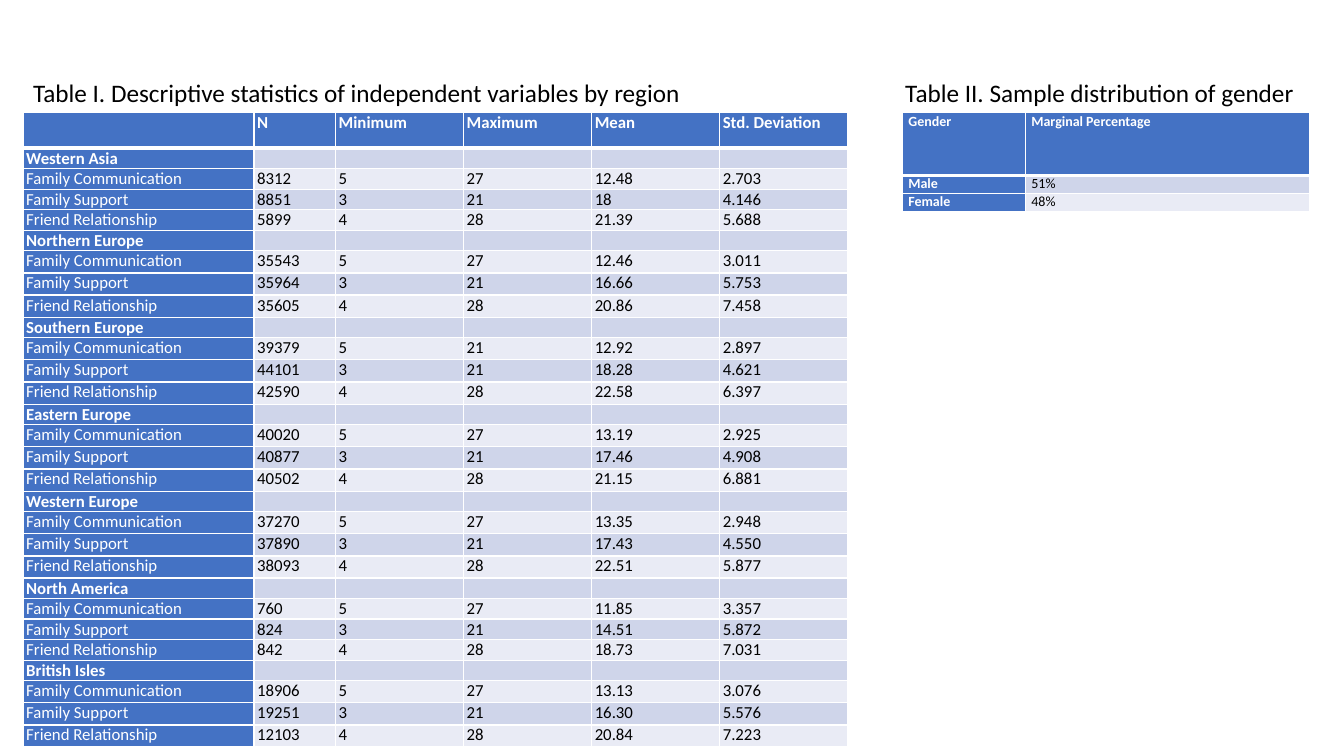
from lxml import etree
from pptx import Presentation
from pptx.dml.color import RGBColor
from pptx.enum.text import MSO_AUTO_SIZE
from pptx.oxml.ns import qn
from pptx.util import Inches, Pt

FIT_SHAPE = MSO_AUTO_SIZE.SHAPE_TO_FIT_TEXT

# Content
FONT = "Calibri"
BLUE, DARK_BAND, LIGHT_BAND = "4472C4", "CFD5EA", "E9EBF5"
WHITE, BLACK = "FFFFFF", "000000"

STATISTICS_CAPTION = "Table I. Descriptive statistics of independent variables by region"
STATISTICS_HEADER = ("", "N", "Minimum", "Maximum", "Mean", "Std. Deviation")
VARIABLES = ("Family Communication", "Family Support", "Friend Relationship")
SHORT_ROW, TALL_ROW = 0.18, 0.22
# Region, height of its variable rows, one line of figures per variable
REGIONS = [
    ("Western Asia", SHORT_ROW, [
        ("8312", "5", "27", "12.48", "2.703"),
        ("8851", "3", "21", "18", "4.146"),
        ("5899", "4", "28", "21.39", "5.688")]),
    ("Northern Europe", TALL_ROW, [
        ("35543", "5", "27", "12.46", "3.011"),
        ("35964", "3", "21", "16.66", "5.753"),
        ("35605", "4", "28", "20.86", "7.458")]),
    ("Southern Europe", TALL_ROW, [
        ("39379", "5", "21", "12.92", "2.897"),
        ("44101", "3", "21", "18.28", "4.621"),
        ("42590", "4", "28", "22.58", "6.397")]),
    ("Eastern Europe", TALL_ROW, [
        ("40020", "5", "27", "13.19", "2.925"),
        ("40877", "3", "21", "17.46", "4.908"),
        ("40502", "4", "28", "21.15", "6.881")]),
    ("Western Europe", TALL_ROW, [
        ("37270", "5", "27", "13.35", "2.948"),
        ("37890", "3", "21", "17.43", "4.550"),
        ("38093", "4", "28", "22.51", "5.877")]),
    ("North America", SHORT_ROW, [
        ("760", "5", "27", "11.85", "3.357"),
        ("824", "3", "21", "14.51", "5.872"),
        ("842", "4", "28", "18.73", "7.031")]),
    ("British Isles", TALL_ROW, [
        ("18906", "5", "27", "13.13", "3.076"),
        ("19251", "3", "21", "16.30", "5.576"),
        ("12103", "4", "28", "20.84", "7.223")]),
]

GENDER_CAPTION = "Table II. Sample distribution of gender"
GENDER_ROWS = [("Gender", "Marginal Percentage"), ("Male", "51%"), ("Female", "48%")]

TABLE_TOP, CAPTION_TOP, CAPTION_HEIGHT = 1.12, 0.72, 0.4


def color(hex_value):
    return RGBColor.from_string(hex_value)


def add_text(paragraph, text, size, hex_value, bold=False):
    run = paragraph.add_run()
    run.text = text
    run.font.name, run.font.size, run.font.bold = FONT, Pt(size), bold
    run.font.color.rgb = color(hex_value)


def add_caption(slide, text, left, width):
    box = slide.shapes.add_textbox(Inches(left), Inches(CAPTION_TOP),
                                   Inches(width), Inches(CAPTION_HEIGHT))
    box.text_frame.word_wrap = False
    box.text_frame.auto_size = FIT_SHAPE
    add_text(box.text_frame.paragraphs[0], text, 18, BLACK)


def set_borders(cell, top, bottom):
    properties = cell._tc.get_or_add_tcPr()
    sides = (("a:lnL", 1), ("a:lnR", 1), ("a:lnT", top), ("a:lnB", bottom))
    for position, (side, points) in enumerate(sides):
        line = etree.Element(qn(side), w=str(Pt(points)))
        fill = etree.SubElement(line, qn("a:solidFill"))
        etree.SubElement(fill, qn("a:srgbClr"), val=WHITE)
        properties.insert(position, line)


def add_data_table(slide, left, widths, heights, rows, size, inset, bold_labels):
    table = slide.shapes.add_table(
        len(rows), len(widths), Inches(left), Inches(TABLE_TOP),
        Inches(sum(widths)), Inches(sum(heights))).table
    table.first_col = True
    for column, width in zip(table.columns, widths):
        column.width = Inches(width)
    for r, (values, height) in enumerate(zip(rows, heights)):
        table.rows[r].height = Inches(height)
        for c, value in enumerate(values):
            cell = table.cell(r, c)
            heading = r == 0 or c == 0
            band = DARK_BAND if r % 2 else LIGHT_BAND
            cell.margin_left = cell.margin_right = Inches(inset)
            cell.margin_top = cell.margin_bottom = 0
            cell.fill.solid()
            cell.fill.fore_color.rgb = color(BLUE if heading else band)
            set_borders(cell, 3 if r == 1 else 1, 3 if r == 0 else 1)
            paragraph = cell.text_frame.paragraphs[0]
            if value:
                bold = r == 0 or (c == 0 and value in bold_labels)
                add_text(paragraph, value, size, WHITE if heading else BLACK, bold)
            else:
                # Keeps an empty cell from stretching its row
                etree.SubElement(paragraph._p, qn("a:endParaRPr"), sz=str(size * 100))


prs = Presentation()
prs.slide_width, prs.slide_height = Inches(13.33), Inches(7.5)
slide = prs.slides.add_slide(prs.slide_layouts[6])

# Table I: a region row, then one row per variable
statistics_rows, statistics_heights = [STATISTICS_HEADER], [0.35]
for region, variable_height, figures in REGIONS:
    statistics_rows.append((region,) + ("",) * 5)
    statistics_rows += [(name, *line) for name, line in zip(VARIABLES, figures)]
    statistics_heights += [SHORT_ROW] + [variable_height] * len(VARIABLES)
add_data_table(slide, 0.23, [2.29, 0.81] + [1.27] * 4, statistics_heights,
               statistics_rows, 12, 0.03, [region for region, _, _ in REGIONS])
add_caption(slide, STATISTICS_CAPTION, 0.23, 6.78)

# Table II
add_data_table(slide, 8.95, [1.22, 2.82], [0.62, SHORT_ROW, SHORT_ROW],
               GENDER_ROWS, 10, 0.06, ["Male", "Female"])
add_caption(slide, GENDER_CAPTION, 8.88, 4.11)

prs.save("out.pptx")
